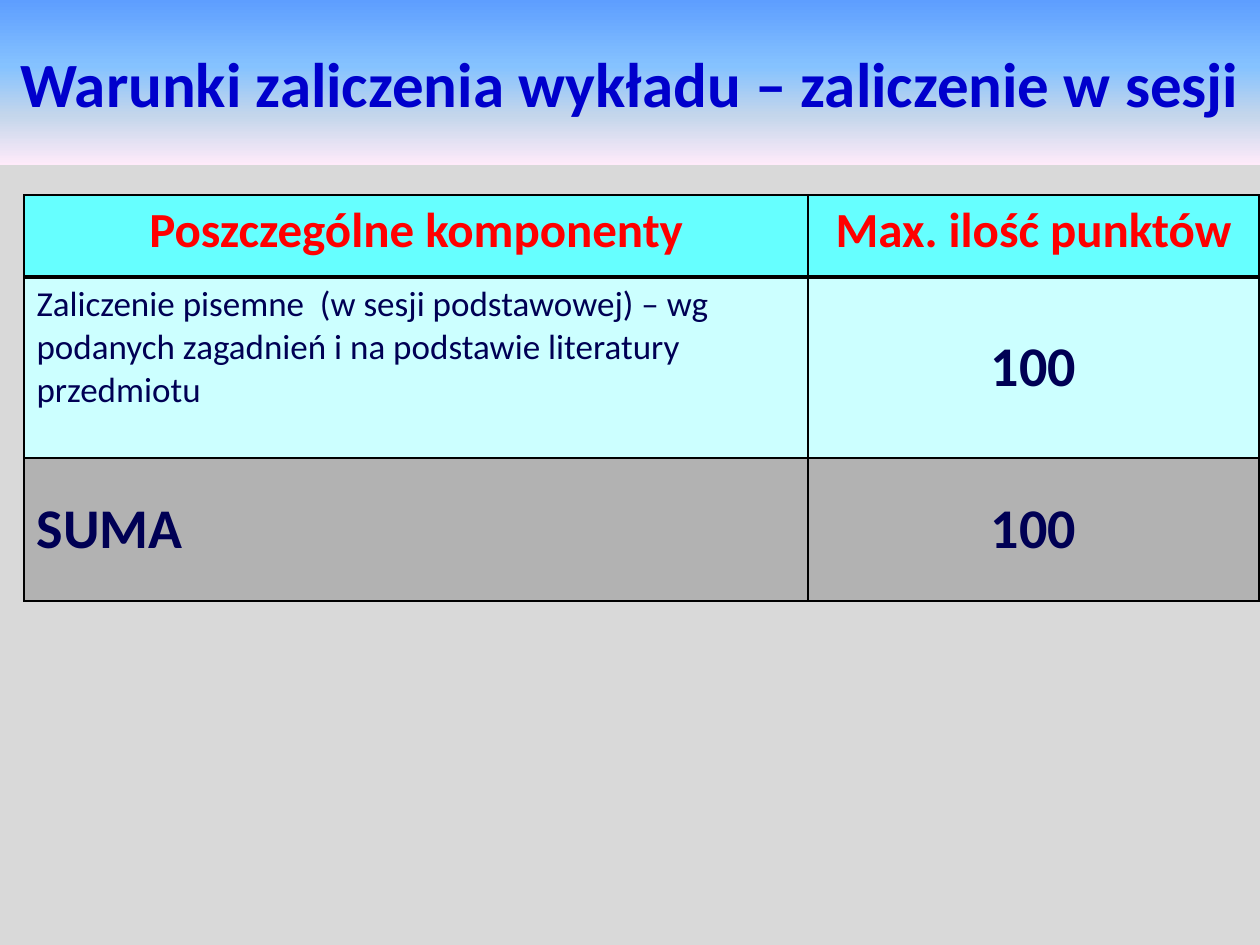
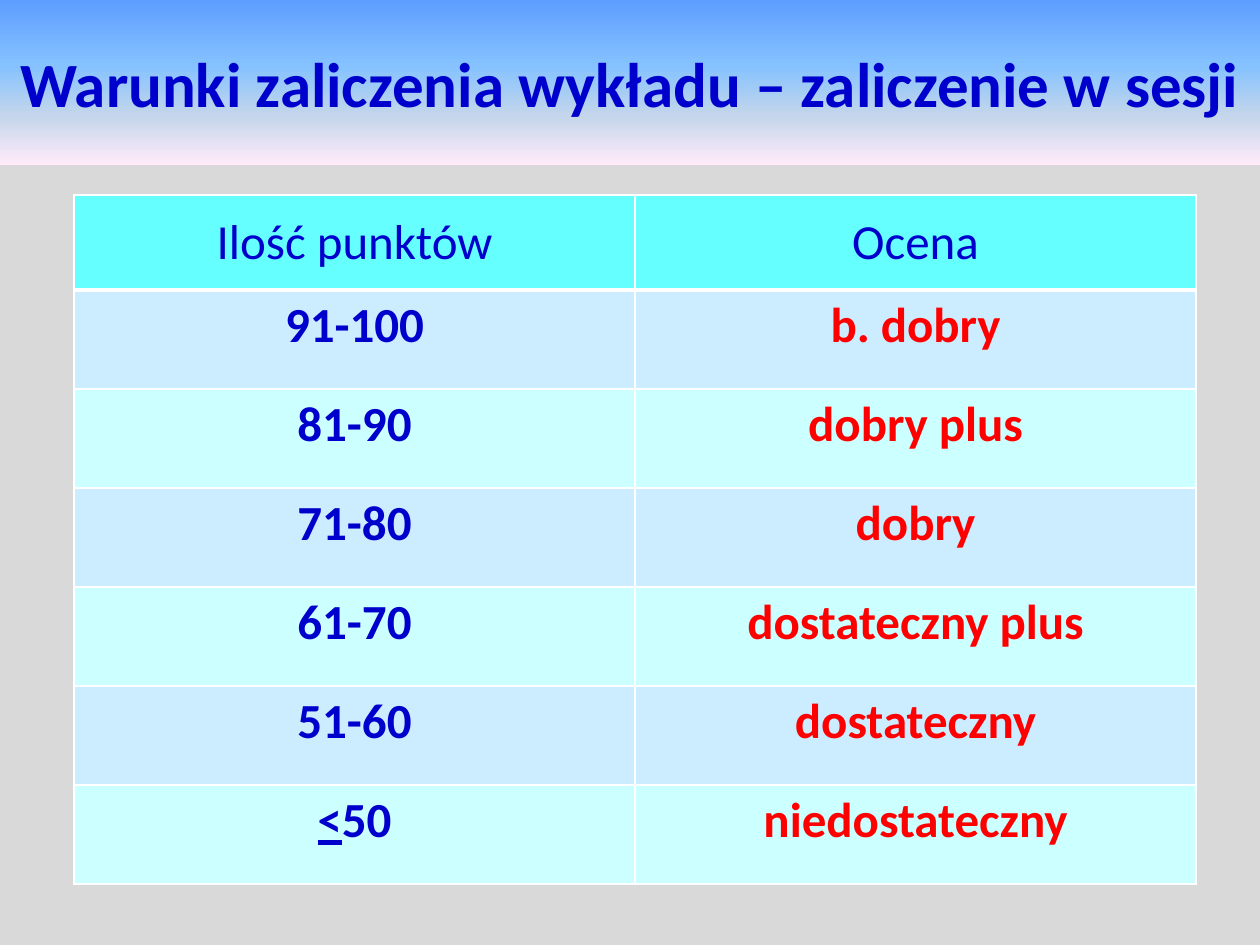
from lxml import etree
from pptx import Presentation
from pptx.dml.color import RGBColor
from pptx.enum.text import MSO_ANCHOR, MSO_AUTO_SIZE, PP_ALIGN
from pptx.oxml.ns import qn
from pptx.util import Emu, Pt

LEFT, CENTER = PP_ALIGN.LEFT, PP_ALIGN.CENTER
TOP, MIDDLE = MSO_ANCHOR.TOP, MSO_ANCHOR.MIDDLE

PX = 914400 / 126
SLIDE_WIDTH, SLIDE_HEIGHT = 1260, 945
BAND_HEIGHT = 165
TABLE_TOP = 195

FONT = "Calibri"
TITLE = "Warunki zaliczenia wykładu – zaliczenie w sesji"

BACKGROUND = RGBColor(0xD9, 0xD9, 0xD9)
BLUE = RGBColor(0x00, 0x00, 0xCC)
RED = RGBColor(0xFF, 0x00, 0x00)
NAVY = RGBColor(0x00, 0x00, 0x54)
BLACK = RGBColor(0x00, 0x00, 0x00)
WHITE = RGBColor(0xFF, 0xFF, 0xFF)
HEADER_CYAN = RGBColor(0x66, 0xFF, 0xFF)
PALE_CYAN = RGBColor(0xCC, 0xFF, 0xFF)
PALE_BLUE = RGBColor(0xCC, 0xEC, 0xFF)
SUM_GREY = RGBColor(0xB2, 0xB2, 0xB2)
BAND_STOPS = [
    (0, RGBColor(0x5E, 0x9E, 0xFF)),
    (40, RGBColor(0x85, 0xC2, 0xFF)),
    (70, RGBColor(0xC4, 0xD6, 0xEB)),
    (100, RGBColor(0xFF, 0xEB, 0xFA)),
]


def px(length):
    return Emu(round(length * PX))


def fill_table(slide, left, column_widths, rows, border_color):
    """Add a table; a row is (height, fill, top border, bottom border, cells),
    a cell is (texts, size, bold, color, alignment, anchor)."""
    heights = [row[0] for row in rows]
    table = slide.shapes.add_table(
        len(rows), len(column_widths), px(left), px(TABLE_TOP),
        px(sum(column_widths)), px(sum(heights))).table
    for column, width in zip(table.columns, column_widths):
        column.width = px(width)
    for r, (height, fill, top, bottom, cells) in enumerate(rows):
        table.rows[r].height = px(height)
        for c, (texts, size, bold, color, alignment, anchor) in enumerate(cells):
            cell = table.cell(r, c)
            cell.vertical_anchor = anchor
            properties = cell._tc.get_or_add_tcPr()
            for side, width in (("lnL", 1), ("lnR", 1), ("lnT", top), ("lnB", bottom)):
                line = etree.SubElement(properties, qn(f"a:{side}"), w=str(Pt(width)))
                solid = etree.SubElement(line, qn("a:solidFill"))
                etree.SubElement(solid, qn("a:srgbClr"), val=str(border_color))
            cell.fill.solid()
            cell.fill.fore_color.rgb = fill
            paragraph = cell.text_frame.paragraphs[0]
            paragraph.alignment = alignment
            for text in texts:
                run = paragraph.add_run()
                run.text = text
                run.font.name = FONT
                run.font.size = Pt(size)
                run.font.bold = bold
                run.font.color.rgb = color
    return table


prs = Presentation()
prs.slide_width, prs.slide_height = px(SLIDE_WIDTH), px(SLIDE_HEIGHT)

# Both slides: grey background and a title on a gradient band
slides = []
for _ in range(2):
    slide = prs.slides.add_slide(prs.slide_layouts[5])
    slide.background.fill.solid()
    slide.background.fill.fore_color.rgb = BACKGROUND

    title = slide.shapes.title
    title.left, title.top = px(0), px(0)
    title.width, title.height = px(SLIDE_WIDTH), px(BAND_HEIGHT)
    gradient = etree.SubElement(title._element.spPr, qn("a:gradFill"), rotWithShape="1")
    stops = etree.SubElement(gradient, qn("a:gsLst"))
    for percent, color in BAND_STOPS:
        stop = etree.SubElement(stops, qn("a:gs"), pos=str(percent * 1000))
        etree.SubElement(stop, qn("a:srgbClr"), val=str(color))
    etree.SubElement(gradient, qn("a:lin"), ang="5400000", scaled="0")

    frame = title.text_frame
    frame.word_wrap = True
    frame.auto_size = MSO_AUTO_SIZE.NONE
    frame.vertical_anchor = MIDDLE
    frame.paragraphs[0].alignment = CENTER
    run = frame.paragraphs[0].add_run()
    run.text = TITLE
    run.font.name = FONT
    run.font.size = Pt(36)
    run.font.bold = True
    run.font.color.rgb = BLUE
    slides.append(slide)

components_slide, grades_slide = slides

# Slide 1: components and their points
exam = ("Zaliczenie pisemne  (w sesji podstawowej) – wg podanych zagadnień "
        "i na podstawie literatury przedmiotu")
points = (["100"], 32, True, NAVY, CENTER, MIDDLE)
component_rows = [
    (82, HEADER_CYAN, 1, 3, [
        ([heading], 28, True, RED, CENTER, TOP)
        for heading in ("Poszczególne komponenty", "Max. ilość punktów")]),
    (181, PALE_CYAN, 3, 1, [([exam], 20, False, NAVY, LEFT, TOP), points]),
    (143, SUM_GREY, 1, 1, [(["SUMA"], 32, True, NAVY, LEFT, MIDDLE), points]),
]
fill_table(components_slide, 24, [784, 451], component_rows, BLACK)

# Slide 2: point ranges and grades
grades = [
    (["91-100"], "b. dobry"),
    (["81-90"], "dobry plus"),
    (["71-80"], "dobry"),
    (["61-70"], "dostateczny plus"),
    (["51-60"], "dostateczny"),
    (["<", "50"], "niedostateczny"),
]
grade_rows = [(95, HEADER_CYAN, 1, 3, [
    ([heading], 28, False, BLUE, CENTER, MIDDLE)
    for heading in ("Ilość punktów", "Ocena")])]
for i, (point_range, grade) in enumerate(grades):
    grade_rows.append((99, PALE_CYAN if i % 2 else PALE_BLUE, 1, 1, [
        (point_range, 28, True, BLUE, CENTER, TOP),
        ([grade], 28, True, RED, CENTER, TOP)]))
grade_table = fill_table(grades_slide, 74, [561, 561], grade_rows, WHITE)
less_or_equal = grade_table.cell(len(grades), 0).text_frame.paragraphs[0].runs[0]
less_or_equal.font.underline = True

prs.save("out.pptx")
